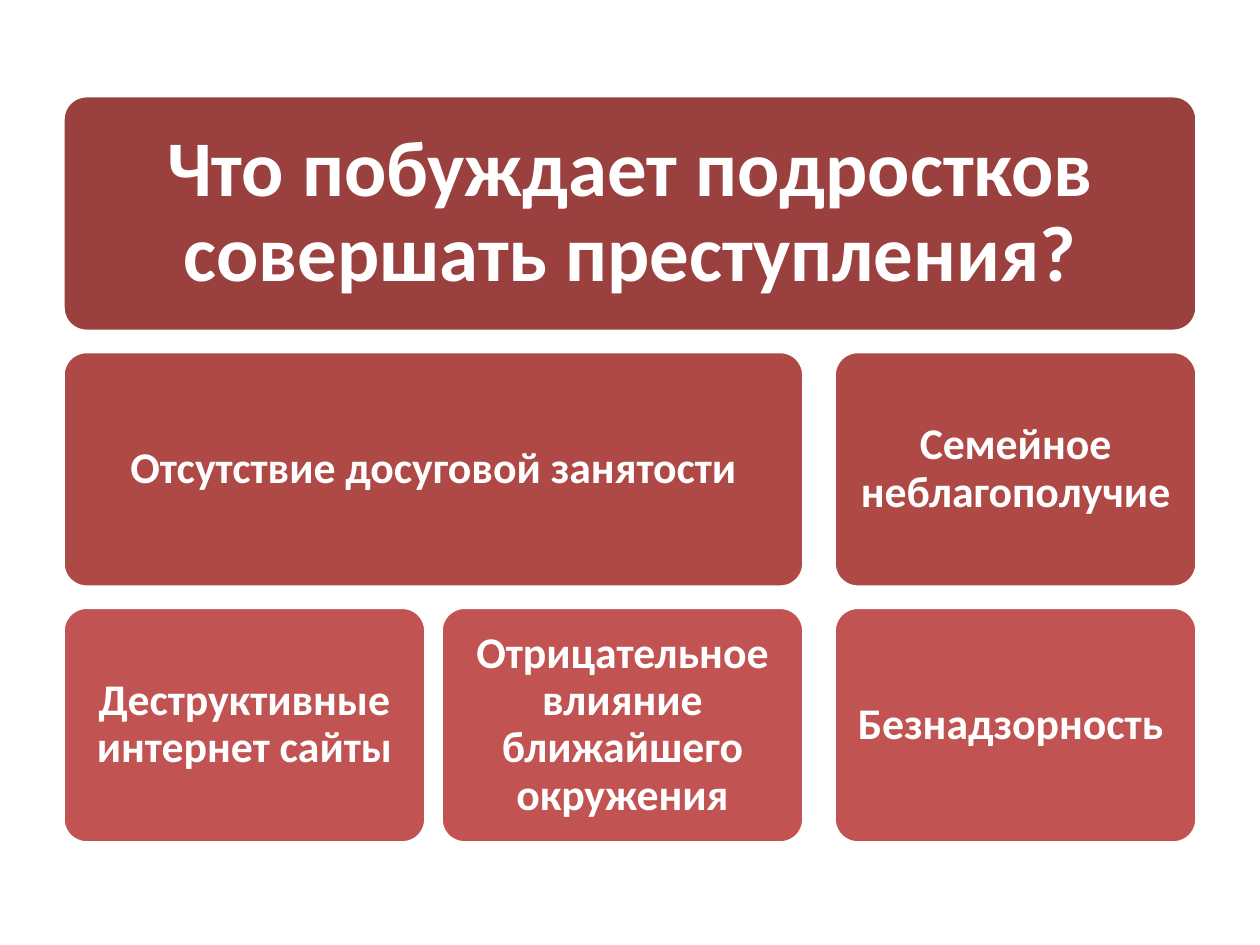
from pptx import Presentation
from pptx.dml.color import RGBColor
from pptx.enum.shapes import MSO_SHAPE
from pptx.enum.text import MSO_ANCHOR, PP_ALIGN
from pptx.util import Inches, Pt

COLORS = {
    "question": "9A403E",
    "cause": "AE4946",
    "detail": "C15452",
    "white": "FFFFFF",
}
LEFT, TOP = 0.5, 0.76
CARD_WIDTH, CARD_HEIGHT = 2.88, 1.87
ROW_STEP = 2.03
COLUMNS = [LEFT, 3.5, 6.62]

CARDS = [
    ("question", 0, 0, 2, "Что побуждает подростков совершать преступления?"),
    ("cause", 1, 0, 1, "Отсутствие досуговой занятости"),
    ("cause", 1, 2, 2, "Семейное неблагополучие"),
    ("detail", 2, 0, 0, "Деструктивные интернет сайты"),
    ("detail", 2, 1, 1, "Отрицательное влияние ближайшего окружения"),
    ("detail", 2, 2, 2, "Безнадзорность "),
]


def color(name):
    return RGBColor.from_string(COLORS[name])


def write_text(card, text, size, inset):
    frame = card.text_frame
    frame.text = text
    frame.word_wrap = True
    frame.vertical_anchor = MSO_ANCHOR.MIDDLE
    frame.margin_left = frame.margin_right = Inches(inset)
    frame.margin_top = frame.margin_bottom = Inches(inset)
    para = frame.paragraphs[0]
    para.alignment = PP_ALIGN.CENTER
    para.line_spacing = 0.9
    font = para.runs[0].font
    font.name = "Calibri"
    font.size = Pt(size)
    font.bold = True
    font.color.rgb = color("white")


def add_card(page, level, row, first, last, text):
    left = COLUMNS[first]
    width = COLUMNS[last] + CARD_WIDTH - left
    card = page.shapes.add_shape(
        MSO_SHAPE.ROUNDED_RECTANGLE,
        Inches(left), Inches(TOP + row * ROW_STEP),
        Inches(width), Inches(CARD_HEIGHT),
    )
    card.adjustments[0] = 0.1
    card.shadow.inherit = False
    card.fill.solid()
    card.fill.fore_color.rgb = color(level)
    card.line.color.rgb = color("white")
    card.line.width = Pt(2)
    size, inset = (45, 0.19) if level == "question" else (25, 0.1)
    write_text(card, text, size, inset)


def main():
    deck = Presentation()
    deck.slide_width = Inches(10)
    deck.slide_height = Inches(7.5)
    page = deck.slides.add_slide(deck.slide_layouts[6])
    for card in CARDS:
        add_card(page, *card)
    deck.save("out.pptx")


if __name__ == "__main__":
    main()
